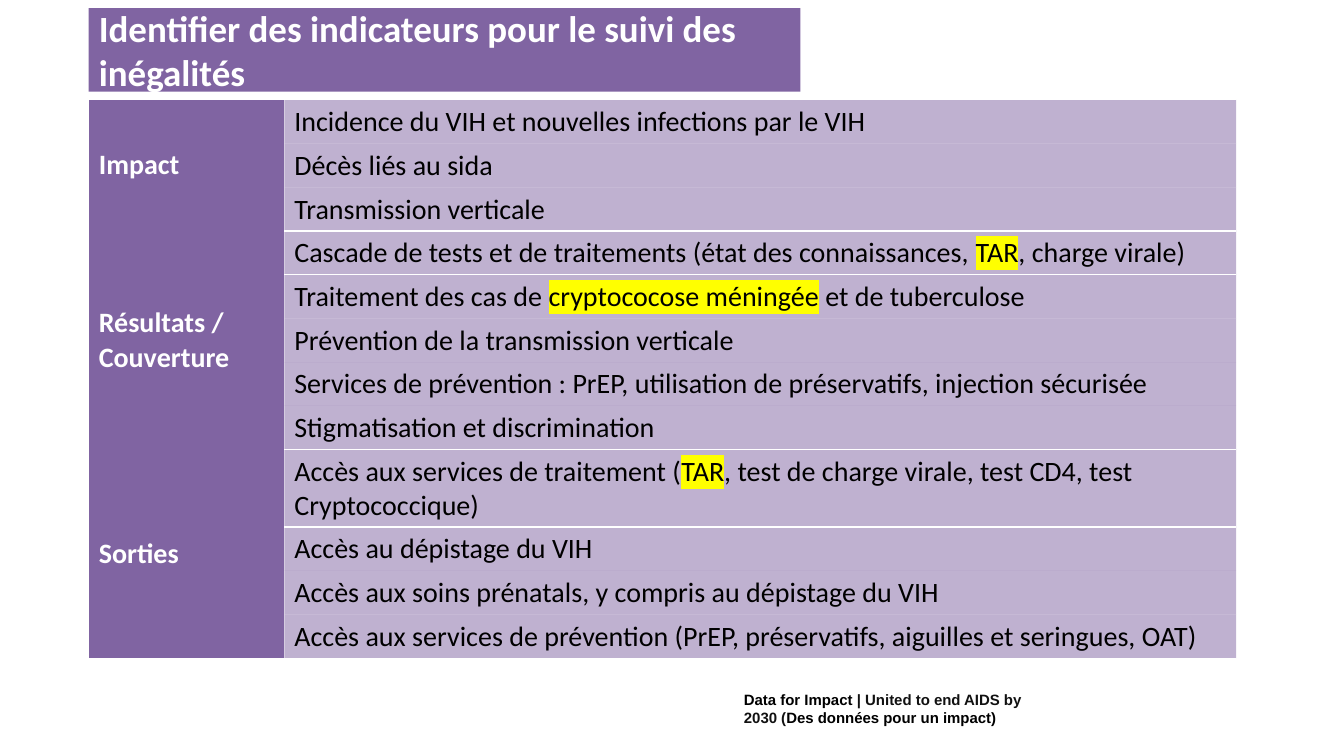
from lxml import etree
from pptx import Presentation
from pptx.dml.color import RGBColor
from pptx.enum.text import MSO_ANCHOR, MSO_AUTO_SIZE, PP_ALIGN
from pptx.oxml import parse_xml
from pptx.oxml.ns import nsdecls, qn
from pptx.util import Inches, Pt

PURPLE = RGBColor(0x80, 0x64, 0xA2)
WHITE = RGBColor(0xFF, 0xFF, 0xFF)
BLACK = RGBColor(0x00, 0x00, 0x00)
NEAR_BLACK = RGBColor(0x11, 0x11, 0x11)
YELLOW = RGBColor(0xFF, 0xFF, 0x00)
NO_STYLE = "{2D5ABB26-0587-4C30-8999-92F81FD0307C}"

GROUPS = [
    ("Impact", [
        "Incidence du VIH et nouvelles infections par le VIH",
        "Décès liés au sida",
        "Transmission verticale",
    ]),
    ("Résultats / Couverture", [
        "Cascade de tests et de traitements (état des connaissances, *TAR*, charge virale)",
        "Traitement des cas de *cryptococose méningée* et de tuberculose",
        "Prévention de la transmission verticale",
        "Services de prévention : PrEP, utilisation de préservatifs, injection sécurisée",
        "Stigmatisation et discrimination",
    ]),
    ("Sorties", [
        "Accès aux services de traitement (*TAR*, test de charge virale, test CD4, test Cryptococcique)",
        "Accès au dépistage du VIH",
        "Accès aux soins prénatals, y compris au dépistage du VIH",
        "Accès aux services de prévention (PrEP, préservatifs, aiguilles et seringues, OAT)",
    ]),
]
FOOTER = [
    ("Data for Impact ", BLACK),
    ("| United to end AIDS by 2030 (", NEAR_BLACK),
    ("Des données pour un impact)", BLACK),
]


def set_font(p, name, size, bold, color=None):
    p.font.name = name
    p.font.size = Pt(size)
    p.font.bold = bold
    if color is not None:
        p.font.color.rgb = color


def add_marked_text(p, text):
    for i, part in enumerate(text.split("*")):
        r = p.add_run()
        r.text = part
        if i % 2:
            highlight = etree.SubElement(r._r.get_or_add_rPr(), qn("a:highlight"))
            etree.SubElement(highlight, qn("a:srgbClr"), val=str(YELLOW))


def fill_cell(cell, color, alpha=None):
    cell.fill.solid()
    cell.fill.fore_color.rgb = color
    if alpha is not None:
        clr = cell._tc.tcPr.find(".//" + qn("a:srgbClr"))
        etree.SubElement(clr, qn("a:alpha"), val=str(alpha * 1000))


def add_border(cell, side):
    cell._tc.get_or_add_tcPr().insert(0, parse_xml(
        f'<a:ln{side} {nsdecls("a")} w="12700"><a:solidFill>'
        f'<a:srgbClr val="{WHITE}"/></a:solidFill></a:ln{side}>'))


def add_title(slide, text):
    title = slide.shapes.title
    title.left, title.top = Inches(0.88), Inches(0.08)
    title.width, title.height = Inches(7.06), Inches(0.83)
    title.fill.solid()
    title.fill.fore_color.rgb = PURPLE
    tf = title.text_frame
    tf.text = text
    tf.word_wrap = True
    tf.auto_size = MSO_AUTO_SIZE.NONE
    tf.vertical_anchor = MSO_ANCHOR.MIDDLE
    p = tf.paragraphs[0]
    p.alignment = PP_ALIGN.LEFT
    set_font(p, "Calibri", 26.4, True, WHITE)


def add_group(table, top, label, indicators):
    bottom = top + len(indicators) - 1
    head = table.cell(top, 0)
    head.merge(table.cell(bottom, 0))
    head.text = label
    head.vertical_anchor = MSO_ANCHOR.MIDDLE
    set_font(head.text_frame.paragraphs[0], "Calibri", 20, True, WHITE)
    for row, text in enumerate(indicators, top):
        fill_cell(table.cell(row, 0), PURPLE)
        cell = table.cell(row, 1)
        p = cell.text_frame.paragraphs[0]
        add_marked_text(p, text)
        set_font(p, "Calibri", 20, False, BLACK)
        fill_cell(cell, PURPLE, 50)
    add_border(table.cell(top, 1), "T")
    add_border(table.cell(bottom, 1), "B")


def add_indicator_table(slide):
    count = sum(len(indicators) for _, indicators in GROUPS)
    height = Inches(0.41)
    table = slide.shapes.add_table(count, 2, Inches(0.88), Inches(0.99),
                                   Inches(11.38), height * count).table
    table._tbl.tblPr.find(qn("a:tableStyleId")).text = NO_STYLE
    table.first_row = table.horz_banding = False
    table.columns[0].width = Inches(1.94)
    table.columns[1].width = Inches(9.44)
    for row in table.rows:
        row.height = height
    top = 0
    for label, indicators in GROUPS:
        add_group(table, top, label, indicators)
        top += len(indicators)


def add_footer(slide):
    tf = slide.shapes.add_textbox(Inches(7.28), Inches(6.8),
                                  Inches(3.06), Inches(0.28)).text_frame
    tf.word_wrap = True
    tf.auto_size = MSO_AUTO_SIZE.SHAPE_TO_FIT_TEXT
    p = tf.paragraphs[0]
    set_font(p, "Arial", 10.7, True)
    for text, color in FOOTER:
        r = p.add_run()
        r.text = text
        r.font.color.rgb = color


def main():
    prs = Presentation()
    prs.slide_width, prs.slide_height = Inches(13.33), Inches(7.5)
    slide = prs.slides.add_slide(prs.slide_layouts[5])
    add_footer(slide)
    add_title(slide, "Identifier des indicateurs pour le suivi des inégalités")
    add_indicator_table(slide)
    prs.save("out.pptx")


if __name__ == "__main__":
    main()
